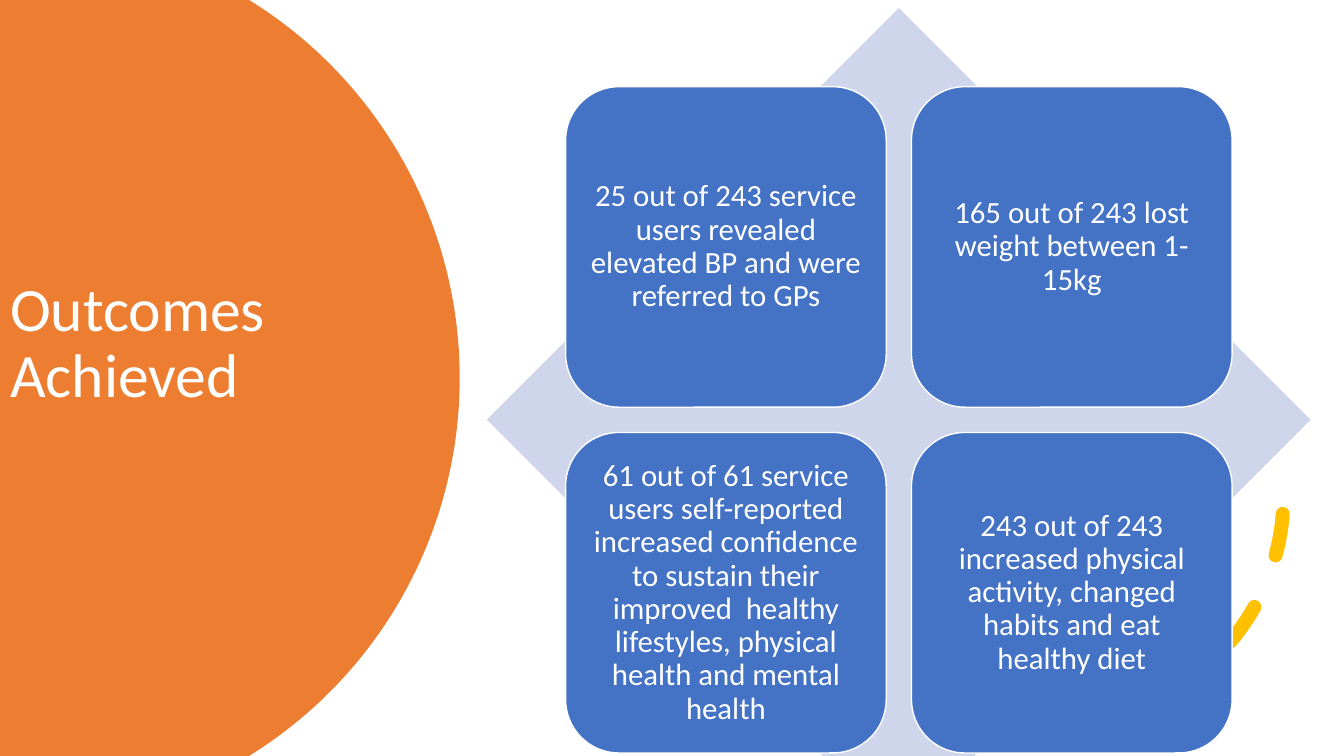
from math import asin, cos, sin
from lxml.etree import SubElement
from pptx import Presentation
from pptx.dml.color import RGBColor
from pptx.enum.dml import MSO_LINE
from pptx.enum.shapes import MSO_SHAPE
from pptx.enum.text import MSO_ANCHOR, PP_ALIGN
from pptx.util import Inches, Pt

ORANGE = RGBColor(0xED, 0x7D, 0x31)
BLUE = RGBColor(0x44, 0x72, 0xC4)
PALE = RGBColor(0xCF, 0xD5, 0xEA)
GOLD = RGBColor(0xFF, 0xC0, 0x00)
WHITE = RGBColor(0xFF, 0xFF, 0xFF)

WIDTH, HEIGHT = 13.33, 7.5
CARDS = [
    "25 out of 243 service users revealed elevated BP and were referred to GPs",
    "165 out of 243 lost weight between 1-15kg",
    "61 out of 61 service users self-reported increased confidence to sustain "
    "their improved  healthy lifestyles, physical health and mental health",
    "243 out of 243 increased physical activity, changed habits and eat healthy diet",
]


class Board:
    font = "Calibri"

    def __init__(self, slide):
        self.slide = slide
        self.shapes = slide.shapes

    def paint(self, shape, fill):
        shape.shadow.inherit = False
        shape.fill.solid()
        shape.fill.fore_color.rgb = fill
        shape.line.fill.background()

    def label(self, shape, text, size, align, inset):
        frame = shape.text_frame
        frame.word_wrap = True
        frame.vertical_anchor = MSO_ANCHOR.MIDDLE
        frame.margin_left = frame.margin_right = Inches(inset)
        frame.margin_top = frame.margin_bottom = Inches(inset)
        para = frame.paragraphs[0]
        para.alignment = align
        para.line_spacing = 0.9
        run = para.add_run()
        run.text = text
        run.font.name = self.font
        run.font.size = Pt(size)
        run.font.color.rgb = WHITE

    def title(self, text, left, top, width, height):
        shape = self.shapes.title
        shape.left, shape.top = Inches(left), Inches(top)
        shape.width, shape.height = Inches(width), Inches(height)
        self.label(shape, text, 44, PP_ALIGN.LEFT, 0.1)

    def disc(self, center, radius, steps=120):
        middle = HEIGHT / 2
        half = asin(middle / radius)
        angles = [half * (2 * i / steps - 1) for i in range(steps + 1)]
        rim = [(Inches(center + radius * cos(a)), Inches(middle + radius * sin(a)))
               for a in angles]
        outline = self.shapes.build_freeform(0, 0)
        outline.add_line_segments(rim + [(0, Inches(HEIGHT))], close=True)
        shape = outline.convert_to_shape()
        self.paint(shape, ORANGE)
        return shape

    def block(self, kind, left, top, size, fill):
        shape = self.shapes.add_shape(
            kind, Inches(left), Inches(top), Inches(size), Inches(size))
        self.paint(shape, fill)
        return shape

    def card(self, text, left, top, size):
        shape = self.block(MSO_SHAPE.ROUNDED_RECTANGLE, left, top, size, BLUE)
        shape.line.color.rgb = WHITE
        shape.line.width = Pt(1)
        self.label(shape, text, 22, PP_ALIGN.CENTER, 0.09)

    def arc(self, left, top, size):
        shape = self.block(MSO_SHAPE.ARC, left, top, size, GOLD)
        shape.fill.background()
        shape.line.color.rgb = GOLD
        shape.line.width = Pt(10)
        shape.line.dash_style = MSO_LINE.DASH
        props = shape.element.spPr
        props.xfrm.set("flipV", "1")
        line = props.ln
        line.set("cap", "rnd")
        SubElement(line, line.tag.replace("}ln", "}round"))


def main():
    deck = Presentation()
    deck.slide_width, deck.slide_height = Inches(WIDTH), Inches(HEIGHT)
    board = Board(deck.slides.add_slide(deck.slide_layouts[5]))
    disc = board.disc(0.15, 4.41)
    board.title("Outcomes Achieved", 0, 1.26, 3.17, 4.32)
    board.shapes.title.element.addprevious(disc.element)
    board.arc(8.26, 2.69, 4.47)
    board.block(MSO_SHAPE.DIAMOND, 4.83, 0.08, 8.17, PALE)
    for i, text in enumerate(CARDS):
        row, col = divmod(i, 2)
        board.card(text, 5.61 + 3.43 * col, 0.86 + 3.43 * row, 3.18)
    deck.save("out.pptx")


if __name__ == "__main__":
    main()
